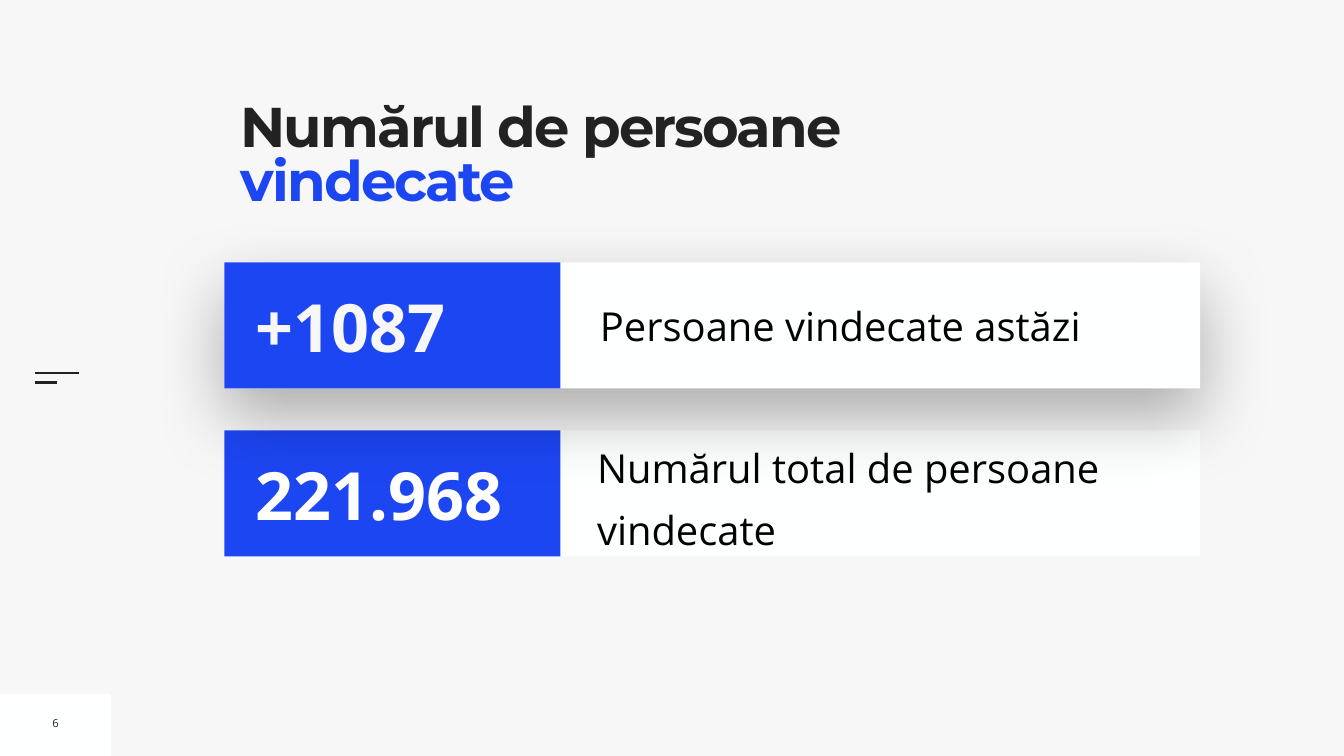
from dataclasses import dataclass
from lxml import etree
from pptx import Presentation
from pptx.dml.color import RGBColor
from pptx.enum.shapes import MSO_CONNECTOR, MSO_SHAPE
from pptx.enum.text import MSO_ANCHOR as ANCHOR, PP_ALIGN as ALIGN
from pptx.oxml import parse_xml
from pptx.oxml.ns import nsdecls, qn
from pptx.util import Pt


@dataclass(frozen=True)
class Theme:
    paper: str = "F7F7F7"
    card: str = "FEFFFF"
    ink: str = "222222"
    accent: str = "1D46F3"
    black: str = "000000"
    white: str = "FFFFFF"
    head_font: str = "Montserrat"
    body_font: str = "Open Sans"
    title_size: int = 80
    figure_size: int = 95
    label_size: int = 57
    page_size: int = 16


T = Theme()

TITLE = [("Numărul de persoane ", T.ink), ("vindecate", T.accent)]
# From back to front: the raised card casts its shadow on the one below it.
CARDS = [
    dict(figure="221.968", color=T.white, label="Numărul total de persoane vindecate",
         top=615, raised=False, label_box=(853, 1.5, 860, 170),
         label_style=dict(inset=0, line_spacing=1.3, space_before=20)),
    dict(figure="+1087", color=T.paper, label="Persoane vindecate astăzi",
         top=375, raised=True, label_box=(850, 47.5, 847, 84), label_style={}),
]
PAGE_NUMBER = "6"
MENU_LINES = [(533.5, 63), (546.5, 32)]  # y, length

CARD_LEFT, CARD_WIDTH, CARD_HEIGHT = 320.4, 1394, 180
FIGURE_WIDTH = 480


def rgb(color):
    return RGBColor.from_string(color)


def add_rect(slide, box, color):
    sp = slide.shapes.add_shape(MSO_SHAPE.RECTANGLE, *map(Pt, box))
    sp.shadow.inherit = False
    sp.fill.solid()
    sp.fill.fore_color.rgb = rgb(color)
    sp.line.fill.background()
    return sp


def add_shadow(sp):
    """Give the shape a wide soft shadow straight below it."""
    effects = sp._element.spPr.find(qn("a:effectLst"))
    effects.append(parse_xml(
        f'<a:outerShdw {nsdecls("a")} blurRad="{Pt(100)}" dist="{Pt(40)}" '
        'dir="5400000" rotWithShape="0"><a:srgbClr val="000000">'
        '<a:alpha val="30000"/></a:srgbClr></a:outerShdw>'))


def add_text(slide, box, runs, size, font=T.body_font, bold=False, inset=7.2,
             anchor=ANCHOR.MIDDLE, align=ALIGN.LEFT, wrap=True,
             line_spacing=None, space_before=None, tracking=None):
    """Add one paragraph made of (text, color) runs."""
    sp = slide.shapes.add_textbox(*map(Pt, box))
    tf = sp.text_frame
    tf.word_wrap = wrap
    tf.vertical_anchor = anchor
    tf.margin_left = tf.margin_right = tf.margin_top = tf.margin_bottom = Pt(inset)
    p = tf.paragraphs[0]
    p.alignment = align
    p.line_spacing = line_spacing
    if space_before is not None:
        p.space_before = Pt(space_before)
    for text, color in runs:
        r = p.add_run()
        r.text = text
        r.font.name, r.font.size, r.font.bold = font, Pt(size), bold
        r.font.color.rgb = rgb(color)
        if tracking is not None:
            r.font._element.set("spc", str(round(tracking * 100)))
    return sp


def add_menu_line(slide, y, length, left=49.7):
    line = slide.shapes.add_connector(
        MSO_CONNECTOR.STRAIGHT, Pt(left), Pt(y), Pt(left + length), Pt(y))
    line.line.color.rgb = rgb(T.ink)
    line.line.width = Pt(3)
    etree.SubElement(line._element.spPr, qn("a:effectLst"))


def add_card(slide, card):
    top = card["top"]
    panel = add_rect(slide, (CARD_LEFT, top, CARD_WIDTH, CARD_HEIGHT), T.card)
    if card["raised"]:
        add_shadow(panel)
    left, offset, width, height = card["label_box"]
    add_text(slide, (left, top + offset, width, height),
             [(card["label"], T.black)], T.label_size, **card["label_style"])
    add_rect(slide, (CARD_LEFT, top, FIGURE_WIDTH, CARD_HEIGHT), T.accent)
    add_text(slide, (358.6, top + 25, 434, 130),
             [(card["figure"], card["color"])], T.figure_size, bold=True)


def main():
    prs = Presentation()
    prs.slide_width, prs.slide_height = Pt(1920), Pt(1080)
    slide = prs.slides.add_slide(prs.slide_layouts[6])
    slide.background.fill.solid()
    slide.background.fill.fore_color.rgb = rgb(T.paper)

    add_rect(slide, (0, 991, 158.5, 89), T.card)
    for y, length in MENU_LINES:
        add_menu_line(slide, y, length)
    title = add_text(slide, (343.5, 149, 937, 197), TITLE, T.title_size, T.head_font,
                     bold=True, inset=0, anchor=ANCHOR.TOP, line_spacing=0.8,
                     tracking=-2.7)
    title.fill.solid()
    title.fill.fore_color.rgb = rgb(T.paper)
    add_text(slide, (67, 1014.5, 24.5, 36.7), [(PAGE_NUMBER, T.ink)], T.page_size,
             align=ALIGN.CENTER, wrap=False)
    for card in CARDS:
        add_card(slide, card)
    prs.save("out.pptx")


if __name__ == "__main__":
    main()
